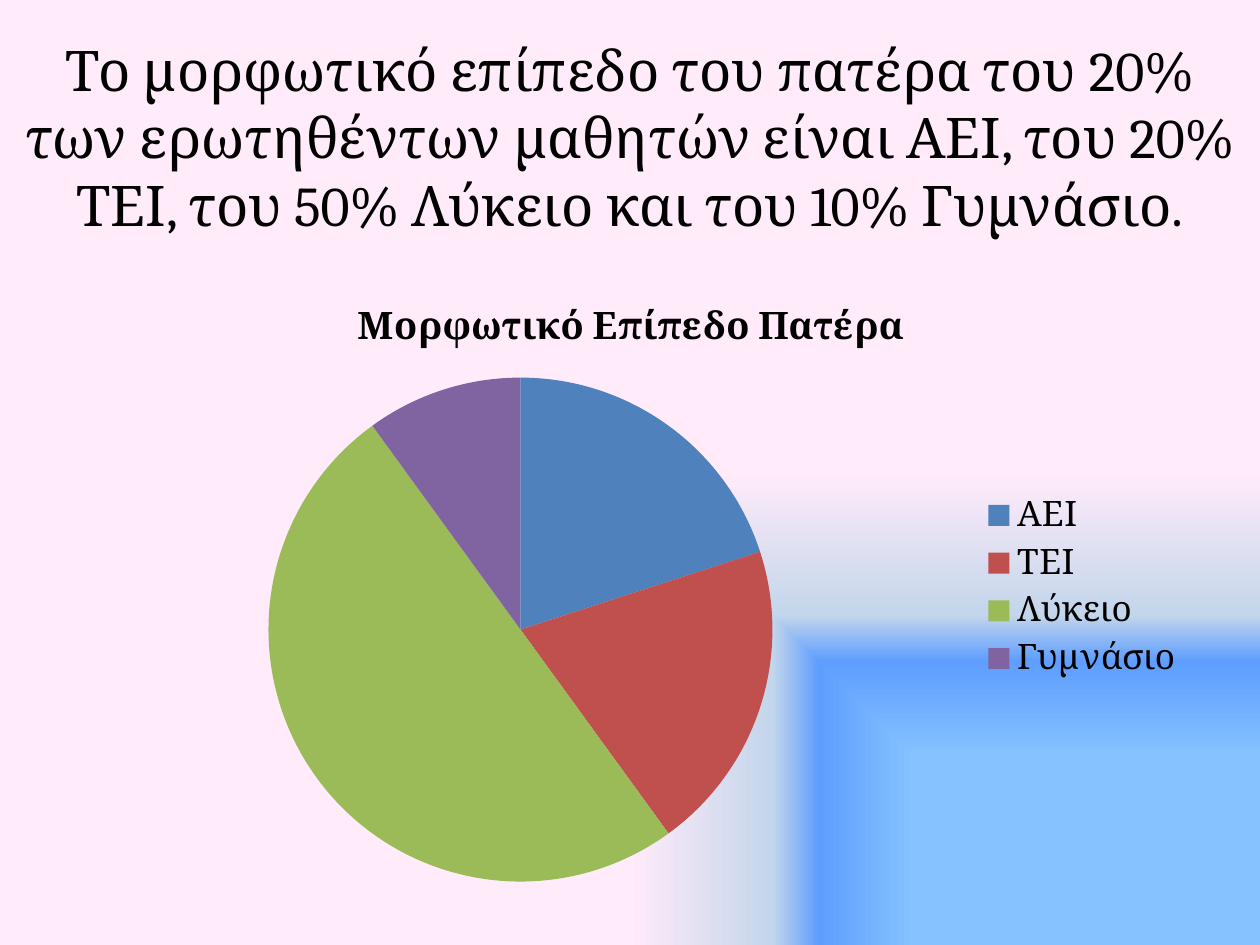
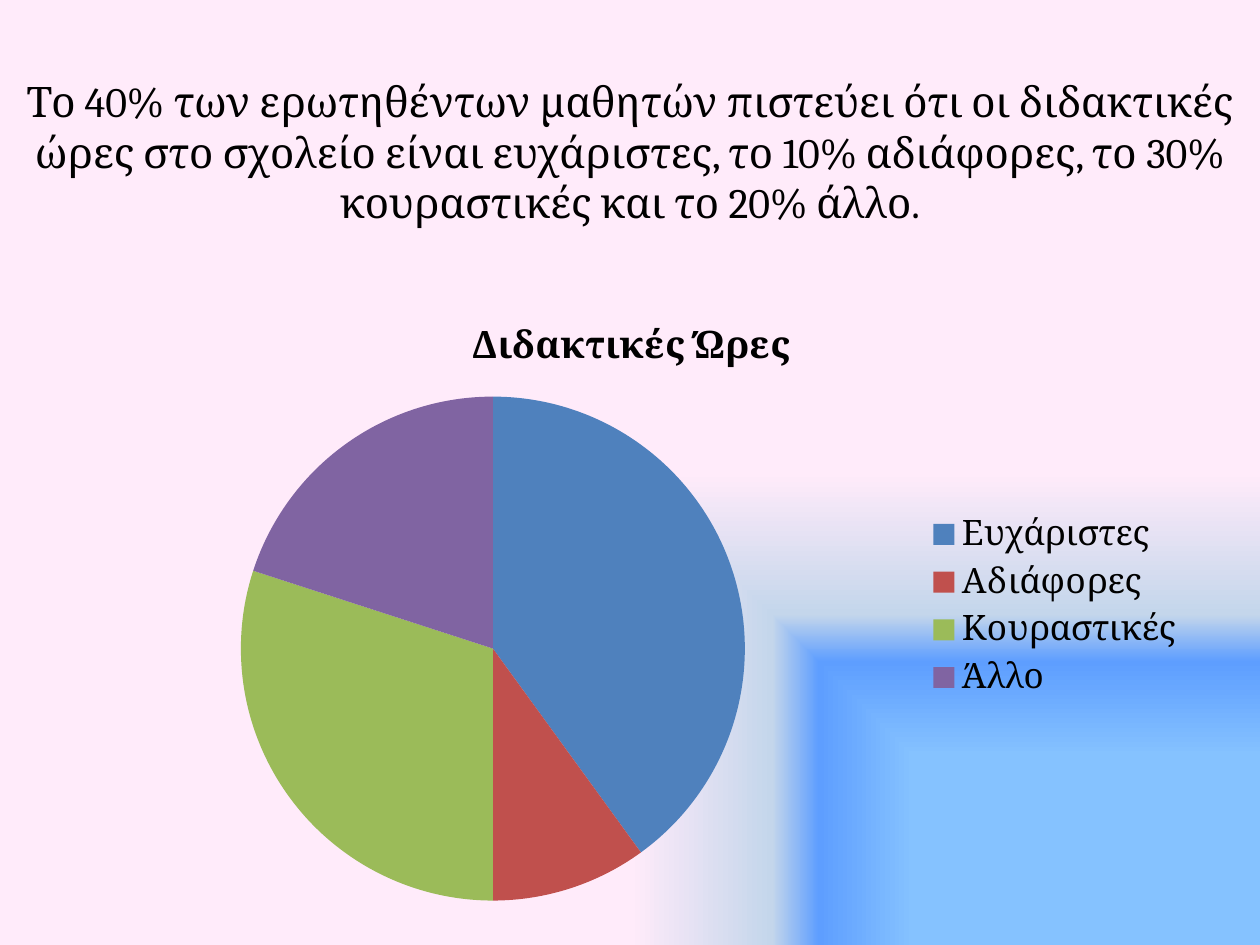
"""Two survey slides, each a title over a pie chart."""
from lxml.etree import SubElement
from pptx import Presentation
from pptx.chart.data import CategoryChartData as Data
from pptx.dml.color import RGBColor
from pptx.enum.chart import XL_CHART_TYPE as Kind, XL_LEGEND_POSITION as Side
from pptx.enum.text import MSO_ANCHOR as Anchor, MSO_AUTO_SIZE as Fit, PP_ALIGN as Align
from pptx.oxml.ns import qn
from pptx.util import Pt

SCALE = 914400 / 126
WIDE, HIGH = 1260, 945
FACE, BASE, INK = "Cambria", "Calibri", "000000"
HUES = ["4F81BD", "C0504D", "9BBB59", "8064A2"]
STOPS = [(40, "85C2FF", 100), (60, "5E9EFF", 70), (70, "C4D6EB", 100), (100, "FFEBFA", 100)]
SLIDES = [
    dict(
        text="Το μορφωτικό επίπεδο του πατέρα του 20% των ερωτηθέντων μαθητών "
             "είναι ΑΕΙ, του 20% ΤΕΙ, του 50% Λύκειο και του 10% Γυμνάσιο.",
        size=32, tall=197, top=275, name="Μορφωτικό Επίπεδο Πατέρα",
        parts={"ΑΕΙ": 20, "ΤΕΙ": 20, "Λύκειο": 50, "Γυμνάσιο": 10}),
    dict(
        text="Το 40% των ερωτηθέντων μαθητών πιστεύει ότι οι διδακτικές ώρες στο σχολείο "
             "είναι ευχάριστες, το 10% αδιάφορες, το 30% κουραστικές και το 20% άλλο.",
        size=24, tall=227, top=294, name="Διδακτικές Ώρες",
        parts={"Ευχάριστες": 40, "Αδιάφορες": 10, "Κουραστικές": 30, "Άλλο": 20}),
]


def px(*nums):
    return [round(n * SCALE) for n in nums]


def hue(code):
    return RGBColor.from_string(code)


def style(font, face, size, bold=False):
    font.name, font.size, font.bold = face, Pt(size), bold
    font.color.rgb = hue(INK)


def paint(slide):
    fill = slide.background.fill
    fill.gradient()
    grad = slide.background._cSld.bg.bgPr.find(qn("a:gradFill"))
    for kid in list(grad):
        grad.remove(kid)
    stops = SubElement(grad, qn("a:gsLst"))
    for place, code, alpha in STOPS:
        stop = SubElement(stops, qn("a:gs"), pos=str(place * 1000))
        color = SubElement(stop, qn("a:srgbClr"), val=code)
        if alpha < 100:
            SubElement(color, qn("a:alpha"), val=str(alpha * 1000))
    shade = SubElement(grad, qn("a:path"))
    shade.set("path", "rect")
    SubElement(shade, qn("a:fillToRect"), l="100000", t="100000")


def head(slide, text, size, tall):
    title = slide.shapes.title
    title.left, title.top, title.width, title.height = px(0, 38, WIDE, tall)
    frame = title.text_frame
    frame.text = text
    frame.word_wrap, frame.auto_size = True, Fit.NONE
    frame.vertical_anchor = Anchor.MIDDLE
    para = frame.paragraphs[0]
    para.alignment = Align.CENTER
    style(para.font, FACE, size)


def pie(slide, name, parts, top):
    data = Data()
    data.categories = list(parts)
    data.add_series(name, list(parts.values()))
    chart = slide.shapes.add_chart(Kind.PIE, *px(64, top, 1134, 624), data).chart
    style(chart.font, BASE, 18)
    chart.has_title = True
    chart.chart_title.include_in_layout = False
    frame = chart.chart_title.text_frame
    frame.text = name
    style(frame.paragraphs[0].font, FACE, 21.6, True)
    chart.has_legend = True
    legend = chart.legend
    legend.position, legend.include_in_layout = Side.RIGHT, False
    style(legend.font, FACE, 20)
    plot = chart.plots[0]
    plot.vary_by_categories = True
    for i, code in enumerate(HUES):
        fill = plot.series[0].points[i].format.fill
        fill.solid()
        fill.fore_color.rgb = hue(code)


def main():
    deck = Presentation()
    deck.slide_width, deck.slide_height = px(WIDE, HIGH)
    for item in SLIDES:
        slide = deck.slides.add_slide(deck.slide_layouts[5])
        paint(slide)
        head(slide, item["text"], item["size"], item["tall"])
        pie(slide, item["name"], item["parts"], item["top"])
    deck.save("out.pptx")


if __name__ == "__main__":
    main()
